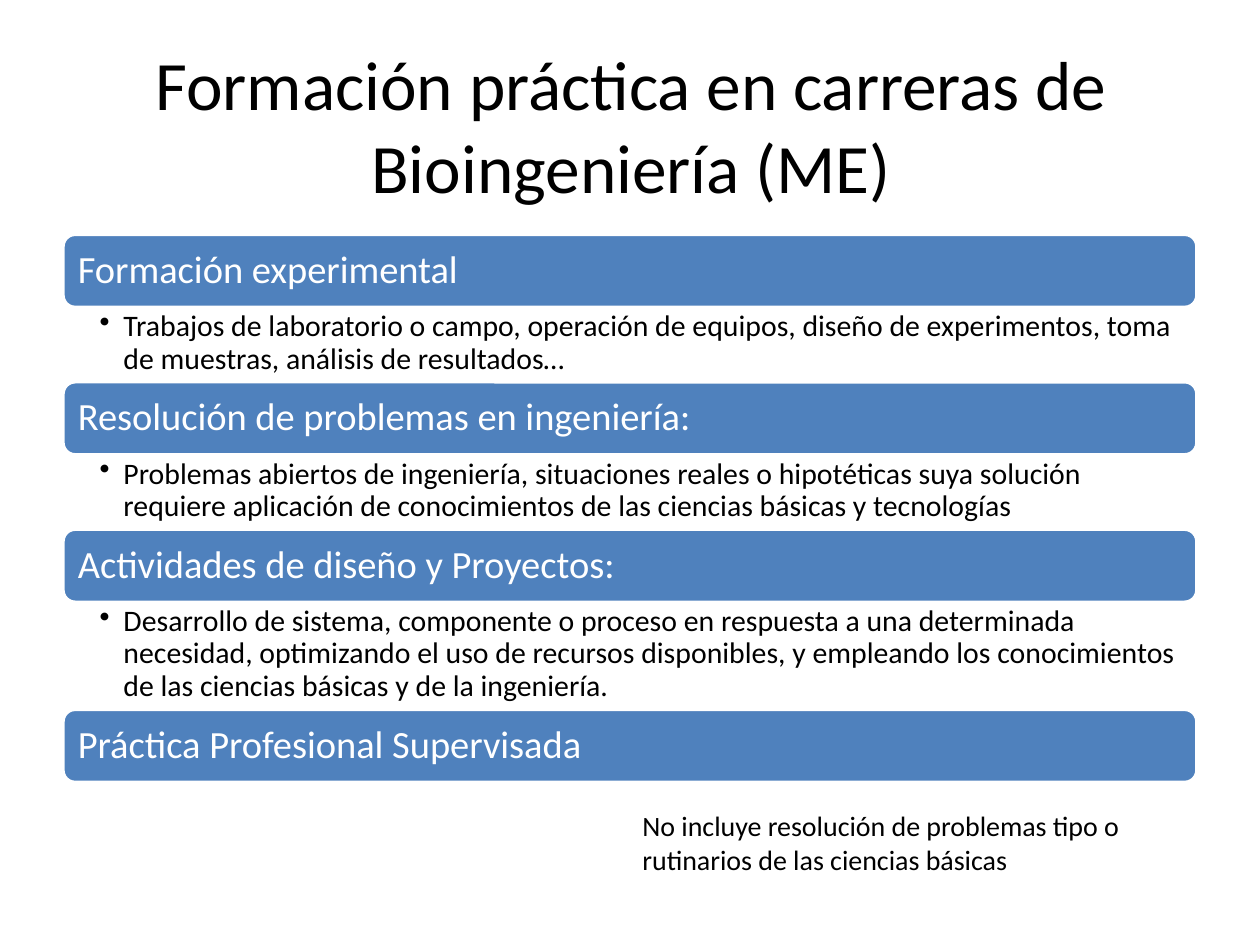
from lxml import etree
from pptx import Presentation
from pptx.dml.color import RGBColor
from pptx.enum.shapes import MSO_SHAPE
from pptx.enum.text import MSO_ANCHOR, PP_ALIGN
from pptx.oxml.ns import qn
from pptx.util import Inches, Pt

BLUE = RGBColor(0x4F, 0x81, 0xBD)
WHITE = RGBColor(0xFF, 0xFF, 0xFF)
BLACK = RGBColor(0x00, 0x00, 0x00)

LEFT, WIDTH, BAR_HEIGHT = 0.5, 9, 0.58

# heading, detail, height of the detail
SECTIONS = [
    ("Formación experimental",
     "Trabajos de laboratorio o campo, operación de equipos, diseño de experimentos, "
     "toma de muestras, análisis de resultados…", 0.59),
    ("Resolución de problemas en ingeniería:",
     "Problemas abiertos de ingeniería, situaciones reales o hipotéticas suya solución "
     "requiere aplicación de conocimientos de las ciencias básicas y tecnologías", 0.59),
    ("Actividades de diseño y Proyectos:",
     "Desarrollo de sistema, componente o proceso en respuesta a una determinada "
     "necesidad, optimizando el uso de recursos disponibles, y empleando los "
     "conocimientos de las ciencias básicas y de la ingeniería.", 0.85),
    ("Práctica Profesional Supervisada", None, 0),
]


def write(sp, text, size, color, align=PP_ALIGN.LEFT):
    """Put one paragraph in the shape and return its frame and paragraph."""
    tf = sp.text_frame
    tf.text = text
    tf.word_wrap = True
    p = tf.paragraphs[0]
    p.alignment = align
    font = p.runs[0].font
    font.name, font.size, font.color.rgb = "Calibri", Pt(size), color
    return tf, p


def set_insets(tf, left, top, right, bottom):
    tf.margin_left, tf.margin_top = Inches(left), Inches(top)
    tf.margin_right, tf.margin_bottom = Inches(right), Inches(bottom)


prs = Presentation()
prs.slide_width, prs.slide_height = Inches(10), Inches(7.5)
s = prs.slides.add_slide(prs.slide_layouts[5])

title = s.shapes.title
title.left, title.top = Inches(0.51), Inches(0.36)
title.width, title.height = Inches(9), Inches(1.25)
tf, p = write(title, "Formación práctica en carreras de Bioingeniería (ME)",
              39.6, BLACK, PP_ALIGN.CENTER)
tf.vertical_anchor = MSO_ANCHOR.MIDDLE

top = 1.86
for heading, detail, detail_height in SECTIONS:
    bar = s.shapes.add_shape(MSO_SHAPE.ROUNDED_RECTANGLE, Inches(LEFT), Inches(top),
                             Inches(WIDTH), Inches(BAR_HEIGHT))
    bar.shadow.inherit = False
    bar.fill.solid()
    bar.fill.fore_color.rgb = BLUE
    bar.line.color.rgb = WHITE
    bar.line.width = Pt(2)
    tf, p = write(bar, heading, 22, WHITE)
    tf.vertical_anchor = MSO_ANCHOR.MIDDLE
    set_insets(tf, 0.09, 0.09, 0.09, 0.09)
    p.line_spacing = 0.9
    top += BAR_HEIGHT

    if detail:
        box = s.shapes.add_textbox(Inches(LEFT), Inches(top),
                                   Inches(WIDTH), Inches(detail_height))
        tf, p = write(box, detail, 17, BLACK)
        set_insets(tf, 0.29, 0.03, 0.17, 0.03)
        p.line_spacing = 0.9
        pPr = p._p.get_or_add_pPr()
        pPr.set("marL", str(Inches(0.19)))
        pPr.set("indent", str(Inches(-0.19)))
        etree.SubElement(pPr, qn("a:buChar")).set("char", "•")
        top += detail_height

note = s.shapes.add_textbox(Inches(5), Inches(6.37), Inches(4.49), Inches(0.64))
write(note, "No incluye resolución de problemas tipo o rutinarios de las ciencias básicas",
      16, BLACK)

prs.save("out.pptx")
